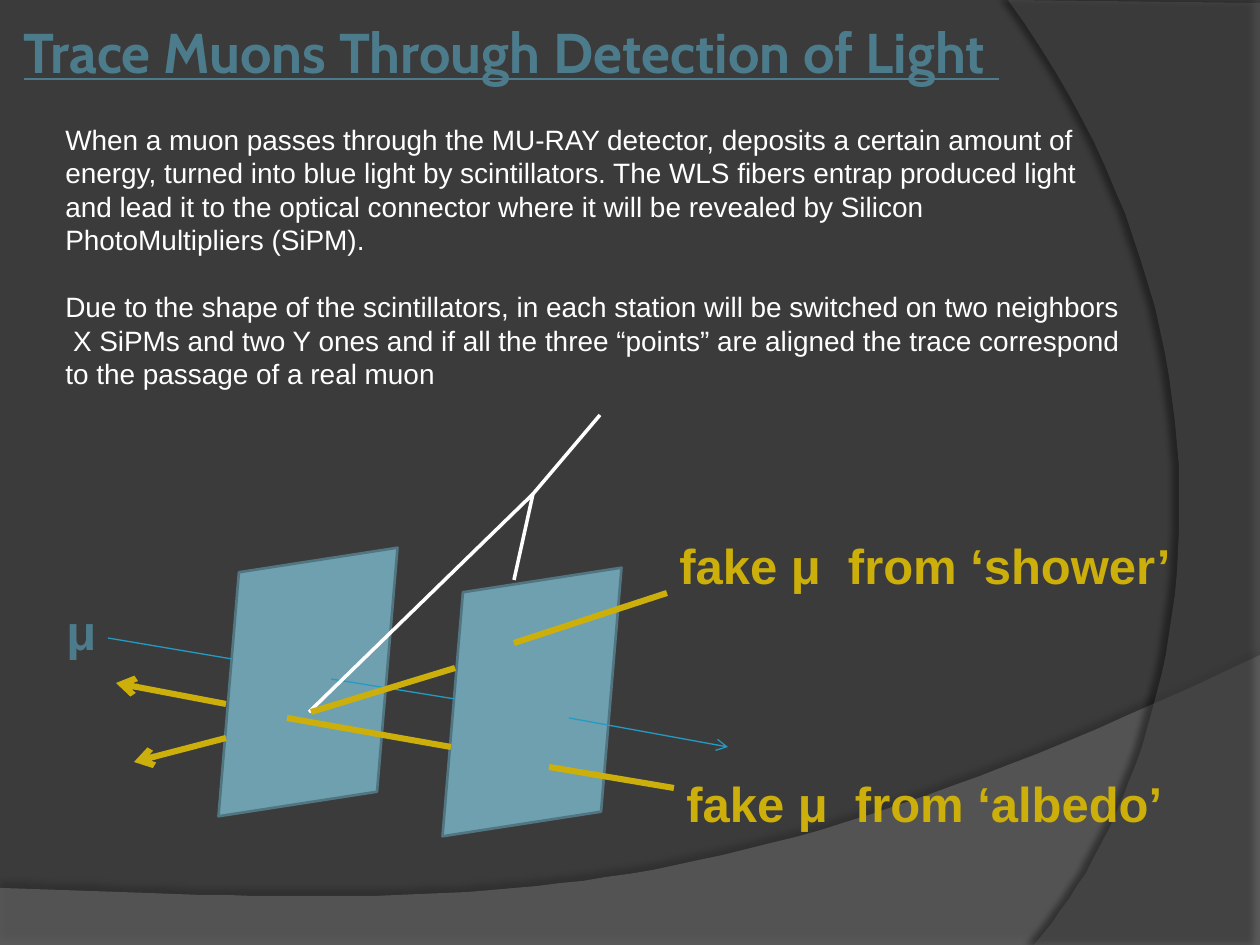
from lxml.etree import SubElement
from pptx import Presentation
from pptx.dml.color import RGBColor as RGB
from pptx.enum.shapes import MSO_CONNECTOR as LINK, MSO_SHAPE as SHAPE
from pptx.enum.text import MSO_ANCHOR as ANCHOR
from pptx.oxml.ns import qn
from pptx.util import Emu, Pt

PX = 914400 / 126
THEME = {
    "back": "3B3B3B", "low": "7F7F7F", "side": "5E5E5E", "dark": "000000",
    "head": "4C7C8B", "body": "FFFFFF", "fake": "CCAF0A", "muon": "239BC2",
    "plate": "6EA0B0", "edge": "517682",
    "title": 32, "text": 16, "label": 28, "gap": 19,
    "sans": "Arial", "show": "Cabin",
}

# Content
TITLE = "Trace Muons Through Detection of Light "
BODY = [
    "When a muon passes through the MU-RAY detector, deposits a certain amount "
    "of energy, turned into blue light by scintillators. The WLS fibers entrap "
    "produced light and lead it to the optical connector where it will be "
    "revealed by Silicon PhotoMultipliers (SiPM).",
    "Due to the shape of the scintillators, in each station will be switched on "
    "two neighbors  X SiPMs and two Y ones and if all the three “points” are "
    "aligned the trace correspond to the passage of a real muon",
]
LABELS = [  # text, box, colour
    ("fake μ  from ‘albedo’", (674, 767, 520, 72), "fake"),
    ("μ", (54, 595, 54, 72), "head"),
    ("fake μ  from ‘shower’", (667, 529, 528, 72), "fake"),
]
WAVES = [  # corners, curve controls and end, fill, opacity, shadow angle
    ([(0, 888), (0, 946), (1260, 946), (1260, 655)],
     [(704, 919), (493, 906), (0, 888)], "low", 45, 270),
    ([(1260, 3), (1260, 945), (1034, 945)],
     [(1178, 780), (1283, 378), (1008, 0)], "side", 40, 180),
]
PLATES = [(199, 563), (423, 583)]
TRACKS = [  # colour, width, (from, to, arrow)
    ("muon", 0.75, [((569, 718), (728, 747), True),
                    ((455, 699), (331, 679), False),
                    ((232, 659), (108, 638), False)]),
    ("body", 2, [((600, 415), (533, 494), False),
                 ((533, 494), (309, 712), False),
                 ((533, 494), (514, 580), False)]),
    ("fake", 3.5, [((226, 704), (116, 683), True),
                   ((451, 747), (287, 718), False),
                   ((674, 788), (549, 767), False),
                   ((226, 738), (134, 762), True),
                   ((455, 668), (311, 712), False),
                   ((667, 593), (514, 643), False)]),
]


def px(*vals):
    return [Emu(round(v * PX)) for v in vals]


def tone(name):
    return RGB.from_string(THEME[name])


def write(slide, box, paras, size="text", color="body", font="sans",
          bold=False, line=False, wrap=True, anchor=ANCHOR.TOP, inset=None):
    frame = slide.shapes.add_textbox(*px(*box)).text_frame
    frame.word_wrap = wrap
    frame.vertical_anchor = anchor
    if inset is not None:
        frame.margin_left = frame.margin_right = px(inset)[0]
    for i, text in enumerate(paras):
        para = frame.add_paragraph() if i else frame.paragraphs[0]
        if i:
            para.space_before = Pt(THEME["gap"])
        run = para.add_run()
        run.text = text
        run.font.size = Pt(THEME[size])
        run.font.name = THEME[font]
        run.font.color.rgb = tone(color)
        run.font.bold, run.font.underline = bold, line


def curve(start, c1, c2, end, steps=48):
    for i in range(1, steps + 1):
        t = i / steps
        u = 1 - t
        yield tuple(u**3 * a + 3 * u * u * t * b + 3 * u * t * t * c + t**3 * d
                    for a, b, c, d in zip(start, c1, c2, end))


def fade(node, share):
    SubElement(node, qn("a:alpha"), val=str(share * 1000))


def wave(slide, pts, bend, fill, share, angle):
    path = slide.shapes.build_freeform(*pts[0], scale=PX)
    path.add_line_segments(pts[1:] + list(curve(pts[-1], *bend)), close=True)
    shape = path.convert_to_shape()
    shape.fill.solid()
    shape.fill.fore_color.rgb = tone(fill)
    shape.line.fill.background()
    shape.shadow.inherit = False
    props = shape._element.spPr
    fade(props.find(qn("a:solidFill"))[0], share)
    glow = SubElement(props.find(qn("a:effectLst")), qn("a:outerShdw"),
                      blurRad=str(Pt(4)), dist=str(Pt(4)),
                      dir=str(angle * 60000), algn="ctr", rotWithShape="0")
    fade(SubElement(glow, qn("a:srgbClr"), val=THEME["dark"]), 40)


def plate(slide, x, y):
    shape = slide.shapes.add_shape(SHAPE.PARALLELOGRAM, *px(x, y, 218, 238))
    shape.adjustments[0] = 0.264
    shape.rotation = 351.2
    shape.shadow.inherit = False
    shape.fill.solid()
    shape.fill.fore_color.rgb = tone("plate")
    shape.line.color.rgb = tone("edge")
    shape.line.width = Pt(1.5)


def track(slide, start, end, color, width, arrow):
    link = slide.shapes.add_connector(LINK.STRAIGHT, *px(*start, *end))
    link.line.color.rgb = tone(color)
    link.line.width = Pt(width)
    if arrow:
        SubElement(link.line._get_or_add_ln(), qn("a:tailEnd"), type="arrow")
    SubElement(link._element.spPr, qn("a:effectLst"))


def main():
    deck = Presentation()
    deck.slide_width, deck.slide_height = px(1260, 945)
    slide = deck.slides.add_slide(deck.slide_layouts[6])

    # Backdrop
    slide.background.fill.solid()
    slide.background.fill.fore_color.rgb = tone("back")
    for item in WAVES:
        wave(slide, *item)

    # Title and body
    write(slide, (18, 6, 1158, 90), [TITLE], size="title", color="head",
          font="show", bold=True, line=True, anchor=ANCHOR.MIDDLE, inset=6)
    write(slide, (53, 116, 1084, 285), BODY)

    # Detector plates, tracks and labels
    for spot in PLATES:
        plate(slide, *spot)
    for color, width, lines in TRACKS:
        for start, end, arrow in lines:
            track(slide, start, end, color, width, arrow)
    for text, box, color in LABELS:
        write(slide, box, [text], size="label", color=color, bold=True,
              wrap=False)

    deck.save("out.pptx")


if __name__ == "__main__":
    main()
